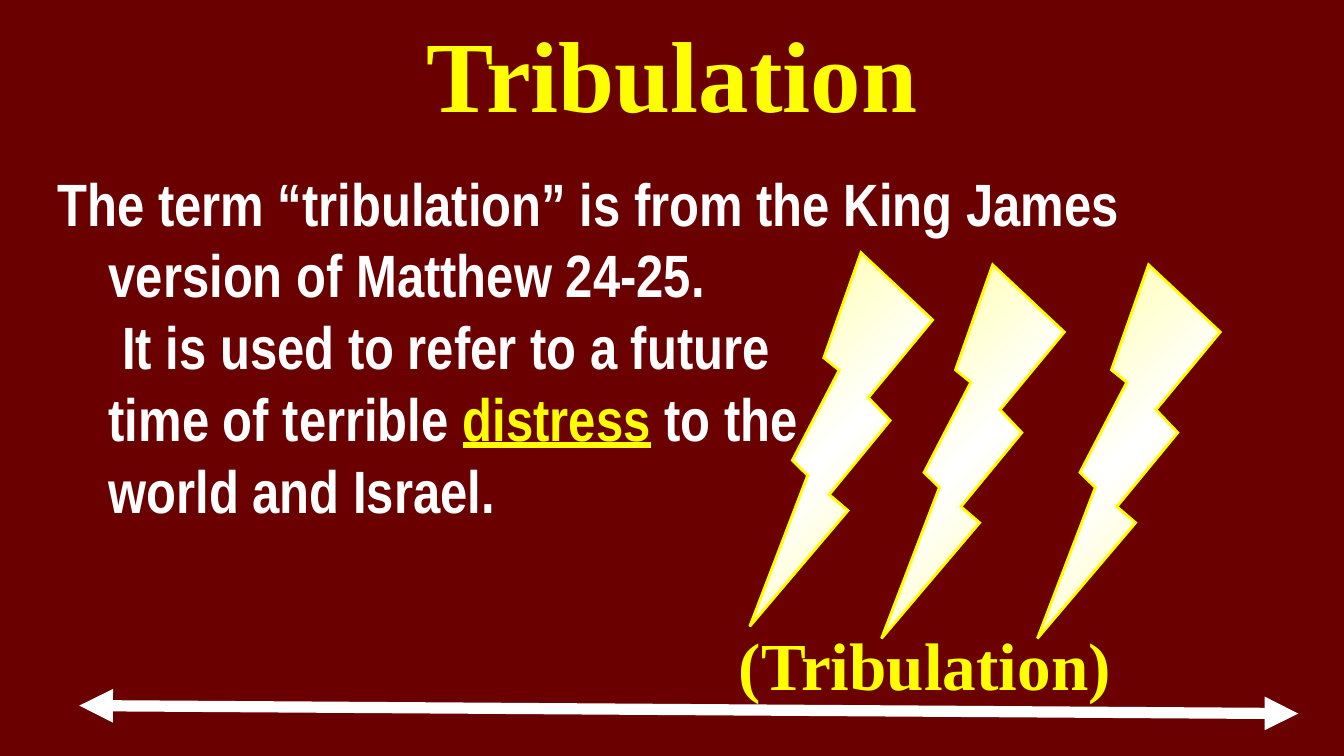
from copy import deepcopy

from lxml.etree import SubElement
from pptx import Presentation
from pptx.dml.color import RGBColor
from pptx.enum.shapes import MSO_CONNECTOR as Connector, MSO_SHAPE as Shape
from pptx.enum.text import MSO_ANCHOR as Anchor, PP_ALIGN as Align
from pptx.oxml.ns import qn
from pptx.util import Inches, Pt

WIDTH = 10
HEIGHT = WIDTH * 9 / 16
COLORS = {"background": "6A0000", "accent": "FFFF00", "text": "FFFFFF",
          "bolt_edge": "FFFF99", "bolt_middle": "FFFFFF"}
SERIF, NARROW = "Times New Roman", "Arial Narrow"
BOLT_SIZE = (1.36, 2.78)
BOLT_POSITIONS = [(5.58, 1.88), (6.56, 1.97), (7.72, 1.97)]
BODY = [
    ("The term “tribulation” is from the King James \vversion of Matthew 24-25. \v"
     " It is used to refer to a future \vtime of terrible ", "text", False),
    ("distress", "accent", True),
    (" to the \vworld and Israel.", "text", False),
]


def color(name):
    return RGBColor.from_string(COLORS[name])


def add_text(slide, box, runs, size, font, align=Align.LEFT, anchor=Anchor.TOP,
             hanging=0, wrap=True):
    """Add one paragraph of (text, colour name, underline) runs; \\v breaks a line."""
    frame = slide.shapes.add_textbox(*map(Inches, box)).text_frame
    frame.word_wrap = wrap
    frame.vertical_anchor = anchor
    paragraph = frame.paragraphs[0]
    paragraph.alignment = align
    if hanging:
        properties = paragraph._p.get_or_add_pPr()
        properties.set("marL", str(Inches(hanging)))
        properties.set("indent", str(-Inches(hanging)))
    for text, color_name, underline in runs:
        for index, line in enumerate(text.split("\v")):
            if index:
                paragraph.add_line_break()
            run = paragraph.add_run()
            run.text = line
            run.font.size, run.font.name = Pt(size), font
            run.font.bold, run.font.underline = True, underline
            run.font.color.rgb = color(color_name)


def fill_gradient(fill, names, angle):
    """Fill with evenly spaced colour stops."""
    fill.gradient()
    fill.gradient_angle = angle
    stop_list = fill._xPr.find(qn("a:gradFill")).find(qn("a:gsLst"))
    for _ in range(len(names) - len(stop_list)):
        stop_list.append(deepcopy(stop_list[-1]))
    for index, (stop, name) in enumerate(zip(fill.gradient_stops, names)):
        stop.position = index / (len(names) - 1)
        stop.color.rgb = color(name)


def add_bolt(slide, left, top):
    bolt = slide.shapes.add_shape(Shape.LIGHTNING_BOLT,
                                  *map(Inches, (left, top, *BOLT_SIZE)))
    bolt.shadow.inherit = False
    bolt._element.spPr.find(qn("a:xfrm")).set("flipH", "1")
    fill_gradient(bolt.fill, ["bolt_edge", "bolt_middle", "bolt_edge"], 45)
    bolt.line.color.rgb = color("accent")
    bolt.line.width = Pt(1.5)
    SubElement(bolt.line._get_or_add_ln(), qn("a:miter"), lim="800000")


def add_double_arrow(slide, start, end, width):
    arrow = slide.shapes.add_connector(Connector.STRAIGHT, *map(Inches, (*start, *end)))
    arrow.line.color.rgb = color("text")
    arrow.line.width = Pt(width)
    for tag in ("a:headEnd", "a:tailEnd"):
        SubElement(arrow.line._get_or_add_ln(), qn(tag), type="triangle")
    SubElement(arrow._element.spPr, qn("a:effectLst"))


def main():
    presentation = Presentation()
    presentation.slide_width, presentation.slide_height = Inches(WIDTH), Inches(HEIGHT)
    slide = presentation.slides.add_slide(presentation.slide_layouts[6])
    slide.background.fill.solid()
    slide.background.fill.fore_color.rgb = color("background")

    add_text(slide, (0.25, 0.1, WIDTH - 0.5, 0.88), [("Tribulation", "accent", False)],
             54, SERIF, align=Align.CENTER, anchor=Anchor.MIDDLE)
    add_text(slide, (0.33, 1.19, 9.42, 4.25), BODY, 32, NARROW, hanging=0.38)
    for left, top in BOLT_POSITIONS:
        add_bolt(slide, left, top)
    add_double_arrow(slide, (0.59, 5.25), (9.66, 5.31), 6)
    add_text(slide, (5.4, 4.59, 3.33, 0.71), [("(Tribulation)", "accent", False)],
             36, SERIF)
    presentation.save("out.pptx")


if __name__ == "__main__":
    main()
